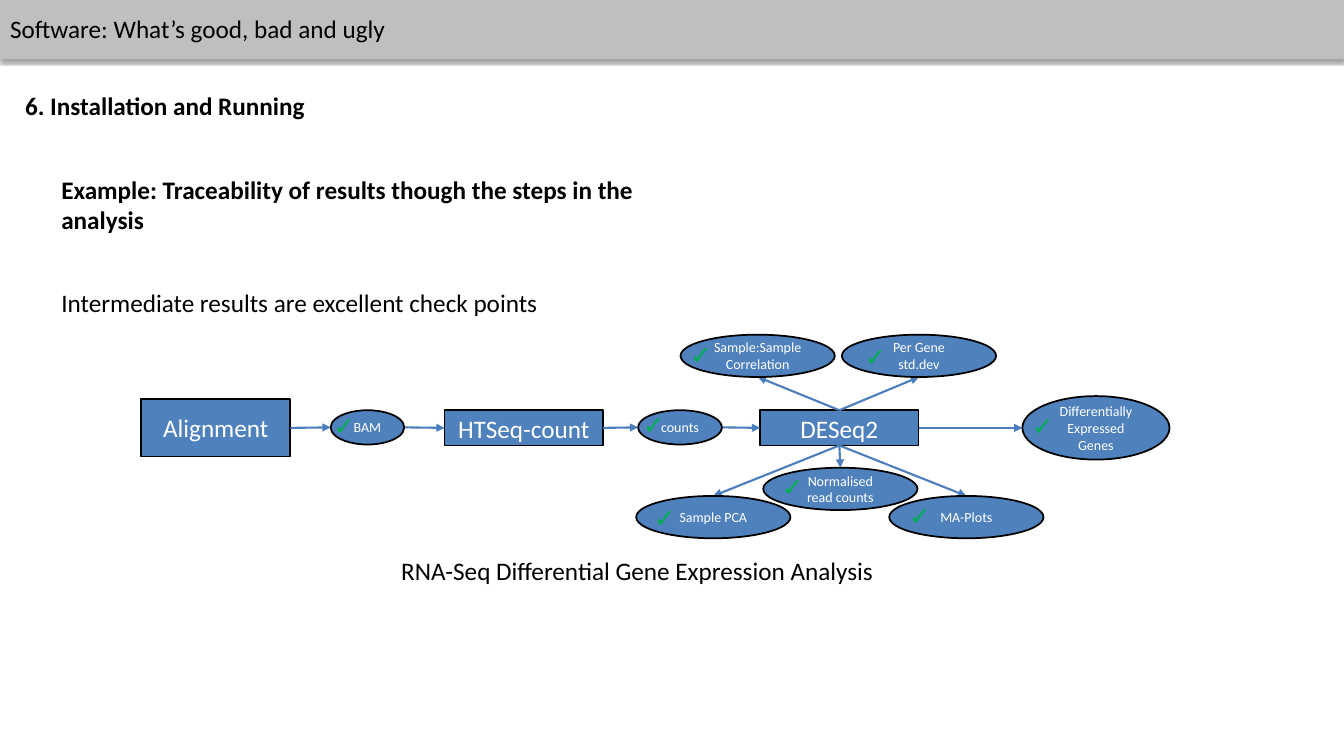
from dataclasses import dataclass
from lxml.etree import SubElement
from pptx import Presentation
from pptx.dml.color import RGBColor
from pptx.enum.shapes import MSO_CONNECTOR, MSO_SHAPE
from pptx.enum.text import MSO_ANCHOR, MSO_AUTO_SIZE, PP_ALIGN
from pptx.oxml.ns import qn
from pptx.util import Inches, Pt


@dataclass(frozen=True)
class Theme:
    font: str = "Calibri"
    text: str = "000000"
    light: str = "FFFFFF"
    band: str = "BFBFBF"
    node: str = "4F81BD"
    arrow: str = "4B7EBC"
    tick: str = "00B050"
    body_size: float = 18
    small_size: float = 10
    outline: float = 1.25
    arrow_width: float = 1.5


THEME = Theme()
TOP, BOTTOM, LEFT, RIGHT = 0, 2, 1, 3
ELLIPSE_TIP = {TOP: (0.5, 1), BOTTOM: (0.5, 0), RIGHT: (0, 0.5)}

STEPS = {
    "Alignment": (0, 0.64, 1.48, 0.57),
    "HTSeq-count": (3.01, 0.75, 1.57, 0.35),
    "DESeq2": (6.14, 0.75, 1.57, 0.35),
}
RESULTS = [
    ("BAM", (1.88, 0.75, 0.73, 0.34), (-0.07, -0.05), "Alignment", RIGHT, "HTSeq-count"),
    ("counts", (4.93, 0.75, 0.83, 0.34), (-0.05, -0.06), "HTSeq-count", RIGHT, "DESeq2"),
    ("Differentially Expressed Genes", (8.74, 0.61, 1.46, 0.63), (0, 0.09), "DESeq2", RIGHT, None),
    ("Sample:Sample Correlation", (5.35, 0, 1.53, 0.42), (0, 0), "DESeq2", TOP, None),
    ("Per Gene std.dev", (6.95, 0, 1.53, 0.42), (0.13, 0.02), "DESeq2", TOP, None),
    ("Sample PCA", (4.91, 1.6, 1.53, 0.42), (0.08, 0.01), "DESeq2", BOTTOM, None),
    ("MA-Plots", (7.42, 1.6, 1.53, 0.42), (0.1, -0.01), "DESeq2", BOTTOM, None),
    ("Normalised read counts", (6.17, 1.32, 1.53, 0.42), (0.09, -0.01), "DESeq2", BOTTOM, None),
]


def lengths(*values):
    return [Inches(value) for value in values]


def write(box, text, size, color, bold=False, align=PP_ALIGN.LEFT, anchor=MSO_ANCHOR.TOP):
    frame = box.text_frame
    frame.text = text
    frame.word_wrap = True
    frame.auto_size = MSO_AUTO_SIZE.NONE
    frame.vertical_anchor = anchor
    para = frame.paragraphs[0]
    para.alignment = align
    font = para.runs[0].font
    font.name, font.size, font.bold = THEME.font, Pt(size), bold
    font.color.rgb = RGBColor.from_string(color)


def add_label(page, place, text, color=THEME.text, bold=False):
    box = page.shapes.add_textbox(*lengths(*place))
    write(box, text, THEME.body_size, color, bold)


def paint(box, fill, line, width):
    box.shadow.inherit = False
    box.fill.solid()
    box.fill.fore_color.rgb = RGBColor.from_string(fill)
    box.line.color.rgb = RGBColor.from_string(line)
    box.line.width = Pt(width)


def add_node(page, kind, place, text, size):
    box = page.shapes.add_shape(kind, *lengths(*place))
    paint(box, THEME.node, THEME.text, THEME.outline)
    write(box, text, size, THEME.light, align=PP_ALIGN.CENTER, anchor=MSO_ANCHOR.MIDDLE)
    return box


def add_arrow(page, start, end):
    arrow = page.shapes.add_connector(MSO_CONNECTOR.STRAIGHT, *lengths(*start, *end))
    arrow.line.color.rgb = RGBColor.from_string(THEME.arrow)
    arrow.line.width = Pt(THEME.arrow_width)
    properties = arrow.element.spPr
    SubElement(properties.find(qn("a:ln")), qn("a:tailEnd"), type="triangle")
    SubElement(properties, qn("a:effectLst"))
    return arrow


def point(place, across, down):
    left, top, width, height = place
    return left + width * across, top + height * down


def add_header(page, left, top, width, height):
    bar = page.shapes.add_shape(MSO_SHAPE.RECTANGLE, *lengths(left, top, width, height))
    paint(bar, THEME.band, THEME.band, 0.75)
    shadow = SubElement(bar.element.spPr.find(qn("a:effectLst")), qn("a:outerShdw"),
                        blurRad=str(Pt(3.1)), dist=str(Pt(1.6)), dir="5400000", rotWithShape="0")
    shade = SubElement(shadow, qn("a:srgbClr"), val=THEME.text)
    SubElement(shade, qn("a:alpha"), val="38000")
    title = page.shapes.title
    title.element.addprevious(bar.element)
    title.left, title.top, title.width, title.height = lengths(left, top + 0.08, 3.97, 0.4)
    write(title, "Software: What’s good, bad and ugly", THEME.body_size, THEME.text)


def add_intro(page, left, top):
    add_label(page, (left, top, 3, 0.4), "6. Installation and Running", bold=True)
    add_label(page, (left + 0.36, top + 0.83, 6.5, 0.7),
              "Example: Traceability of results though the steps in the analysis", bold=True)
    add_label(page, (left + 0.36, top + 1.95, 5.12, 0.4),
              "Intermediate results are excellent check points")


def add_workflow(page, left, top):
    def shift(place):
        return (left + place[0], top + place[1], *place[2:])

    steps = {name: add_node(page, MSO_SHAPE.RECTANGLE, shift(place), name, THEME.body_size)
             for name, place in STEPS.items()}
    for name, place, tick, source, side, target in RESULTS:
        tip = point(shift(place), *ELLIPSE_TIP[side])
        add_arrow(page, tip, tip).begin_connect(steps[source], side)
        if target:
            exit_point = point(shift(place), 1, 0.5)
            add_arrow(page, exit_point, exit_point).end_connect(steps[target], LEFT)
    for name, place, tick, source, side, target in RESULTS:
        x, y, width, height = shift(place)
        add_node(page, MSO_SHAPE.OVAL, (x, y, width, height), name, THEME.small_size)
        add_label(page, (x + tick[0], y + tick[1], 0.45, 0.4), "✓", THEME.tick)
    add_label(page, (left + 2.48, top + 2.14, 5.05, 0.4),
              "RNA-Seq Differential Gene Expression Analysis")


def main():
    deck = Presentation()
    deck.slide_width, deck.slide_height = lengths(13.33, 7.5)
    page = deck.slides.add_slide(deck.slide_layouts[5])
    add_header(page, 0, 0, 13.33, 0.58)
    add_intro(page, 0.15, 0.85)
    add_workflow(page, 1.4, 3.32)
    deck.save("out.pptx")


if __name__ == "__main__":
    main()
